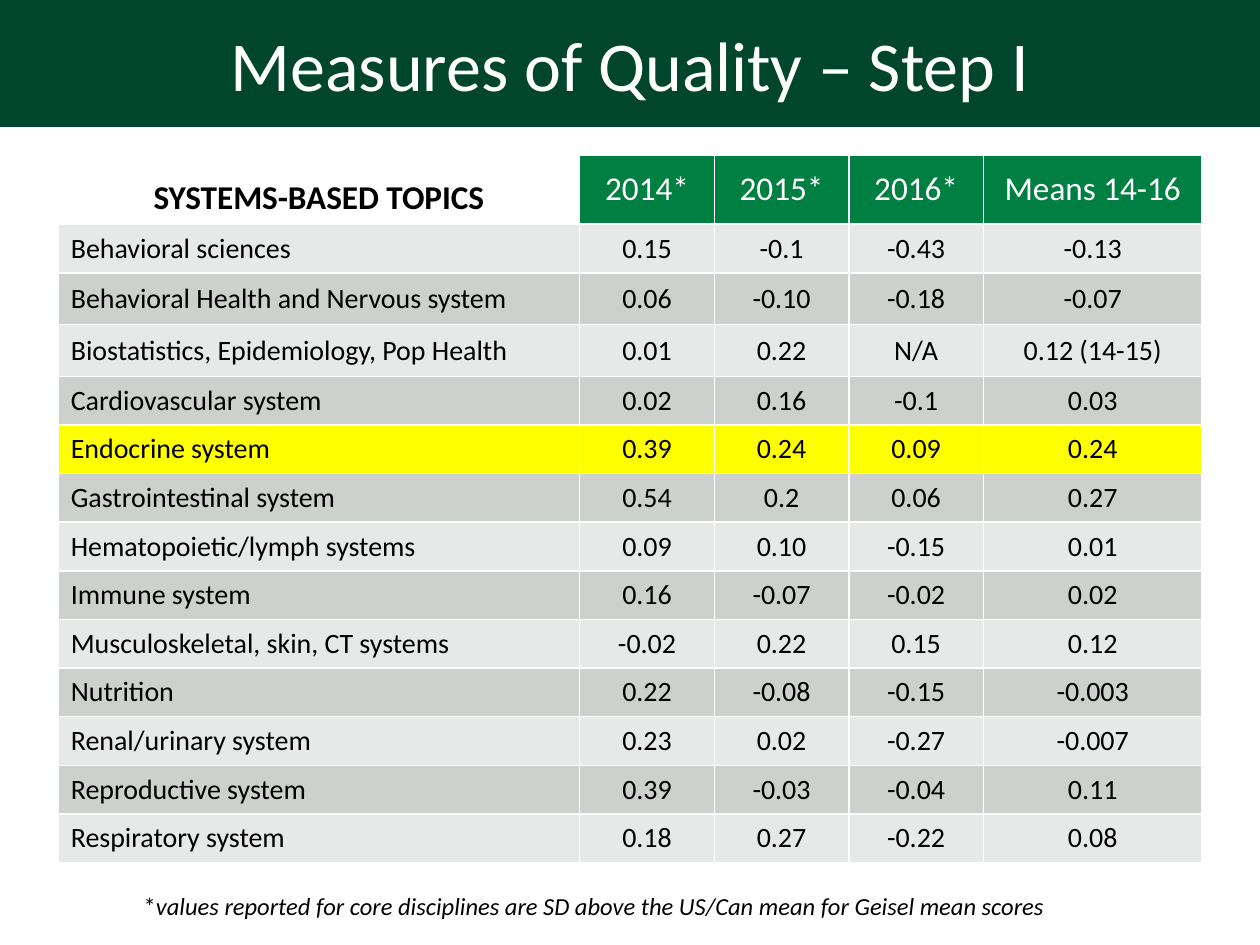
import pptx
import pptx.util
import pptx.dml.color
import pptx.enum.text
import lxml.etree

Pt = pptx.util.Pt
ALIGN = pptx.enum.text.PP_ALIGN
ANCHOR = pptx.enum.text.MSO_ANCHOR
NS = "http://schemas.openxmlformats.org/drawingml/2006/main"


def color(value):
    return pptx.dml.color.RGBColor.from_string(value)


class Deck:
    font = "Calibri"
    dark, green, light, gray = "00462D", "007F42", "E7E9E8", "CCD1CD"
    white, black, yellow = "FFFFFF", "000000", "FFFF00"

    def __init__(self, width, height):
        self.prs = pptx.Presentation()
        self.prs.slide_width, self.prs.slide_height = Pt(width), Pt(height)
        self.s = self.prs.slides.add_slide(self.prs.slide_layouts[5])

    def run(self, p, text, size, fill, bold=False, italic=False):
        r = p.add_run()
        r.text = text
        f = r.font
        f.name, f.size, f.bold, f.italic = self.font, Pt(size), bold, italic
        f.color.rgb = color(fill)

    def title(self, text, x, y, w, h):
        sp = self.s.shapes.title
        sp.left, sp.top, sp.width, sp.height = Pt(x), Pt(y), Pt(w), Pt(h)
        sp.fill.solid()
        sp.fill.fore_color.rgb = color(self.dark)
        tf = sp.text_frame
        tf.vertical_anchor = ANCHOR.MIDDLE
        p = tf.paragraphs[0]
        p.alignment = ALIGN.CENTER
        self.run(p, text, 40, self.white)

    def text(self, runs, x, y, w, h):
        tf = self.s.shapes.add_textbox(Pt(x), Pt(y), Pt(w), Pt(h)).text_frame
        tf.word_wrap = False
        tf.auto_size = pptx.enum.text.MSO_AUTO_SIZE.SHAPE_TO_FIT_TEXT
        for text, italic in runs:
            self.run(tf.paragraphs[0], text, 14, self.black, italic=italic)

    def borders(self, cell):
        tc_pr = cell._tc.get_or_add_tcPr()
        for side in ("lnL", "lnR", "lnT", "lnB"):
            ln = lxml.etree.SubElement(tc_pr, f"{{{NS}}}{side}", w=str(Pt(1)))
            fill = lxml.etree.SubElement(ln, f"{{{NS}}}solidFill")
            lxml.etree.SubElement(fill, f"{{{NS}}}srgbClr", val=self.white)

    def cell(self, cell, text, fill, size, ink, bold=False,
             align=ALIGN.CENTER, anchor=ANCHOR.MIDDLE):
        self.borders(cell)
        if fill:
            cell.fill.solid()
            cell.fill.fore_color.rgb = color(fill)
        else:
            cell.fill.background()
        cell.vertical_anchor = anchor
        p = cell.text_frame.paragraphs[0]
        p.alignment = align
        self.run(p, text, size, ink, bold)

    def table(self, header, rows, highlight, x, y, widths, heights):
        shape = self.s.shapes.add_table(len(heights), len(widths), Pt(x), Pt(y),
                                        Pt(sum(widths)), Pt(sum(heights)))
        tbl = shape.table
        tbl.first_row = tbl.horz_banding = False
        for col, w in zip(tbl.columns, widths):
            col.width = Pt(w)
        for row, h in zip(tbl.rows, heights):
            row.height = Pt(h)
        self.cell(tbl.cell(0, 0), header[0], None, 19, self.black, True,
                  anchor=ANCHOR.BOTTOM)
        for j, text in enumerate(header[1:], 1):
            self.cell(tbl.cell(0, j), text, self.green, 19, self.white)
        for i, values in enumerate(rows, 1):
            fill = self.light if i % 2 else self.gray
            if values[0] == highlight:
                fill = self.yellow
            for j, text in enumerate(values):
                self.cell(tbl.cell(i, j), text, fill, 16, self.black,
                          align=ALIGN.CENTER if j else ALIGN.LEFT)


HEADER = ("SYSTEMS-BASED TOPICS", "2014*", "2015*", "2016*", "Means 14-16")
SCORES = (
    ("Behavioral sciences", "0.15", "-0.1", "-0.43", "-0.13"),
    ("Behavioral Health and Nervous system", "0.06", "-0.10", "-0.18", "-0.07"),
    ("Biostatistics, Epidemiology, Pop Health", "0.01", "0.22", "N/A", "0.12 (14-15)"),
    ("Cardiovascular system", "0.02", "0.16", "-0.1", "0.03"),
    ("Endocrine system", "0.39", "0.24", "0.09", "0.24"),
    ("Gastrointestinal system", "0.54", "0.2", "0.06", "0.27"),
    ("Hematopoietic/lymph systems", "0.09", "0.10", "-0.15", "0.01"),
    ("Immune system", "0.16", "-0.07", "-0.02", "0.02"),
    ("Musculoskeletal, skin, CT systems", "-0.02", "0.22", "0.15", "0.12"),
    ("Nutrition", "0.22", "-0.08", "-0.15", "-0.003"),
    ("Renal/urinary system", "0.23", "0.02", "-0.27", "-0.007"),
    ("Reproductive system", "0.39", "-0.03", "-0.04", "0.11"),
    ("Respiratory system", "0.18", "0.27", "-0.22", "0.08"),
)


def main():
    deck = Deck(720, 540)
    deck.title("Measures of Quality – Step I", 0, 0, 720, 72.5)
    deck.table(HEADER, SCORES, "Endocrine system", 33.3, 88.6,
               [298] + [76.9] * 3 + [125],
               [39.5, 27.8] + [29.6] * 2 + [27.8] * 10)
    deck.text([("*", False),
               ("values reported for core disciplines are SD above "
                "the US/Can mean for Geisel mean scores", True)],
              75, 505.5, 536.5, 24.5)
    deck.prs.save("out.pptx")


if __name__ == "__main__":
    main()
